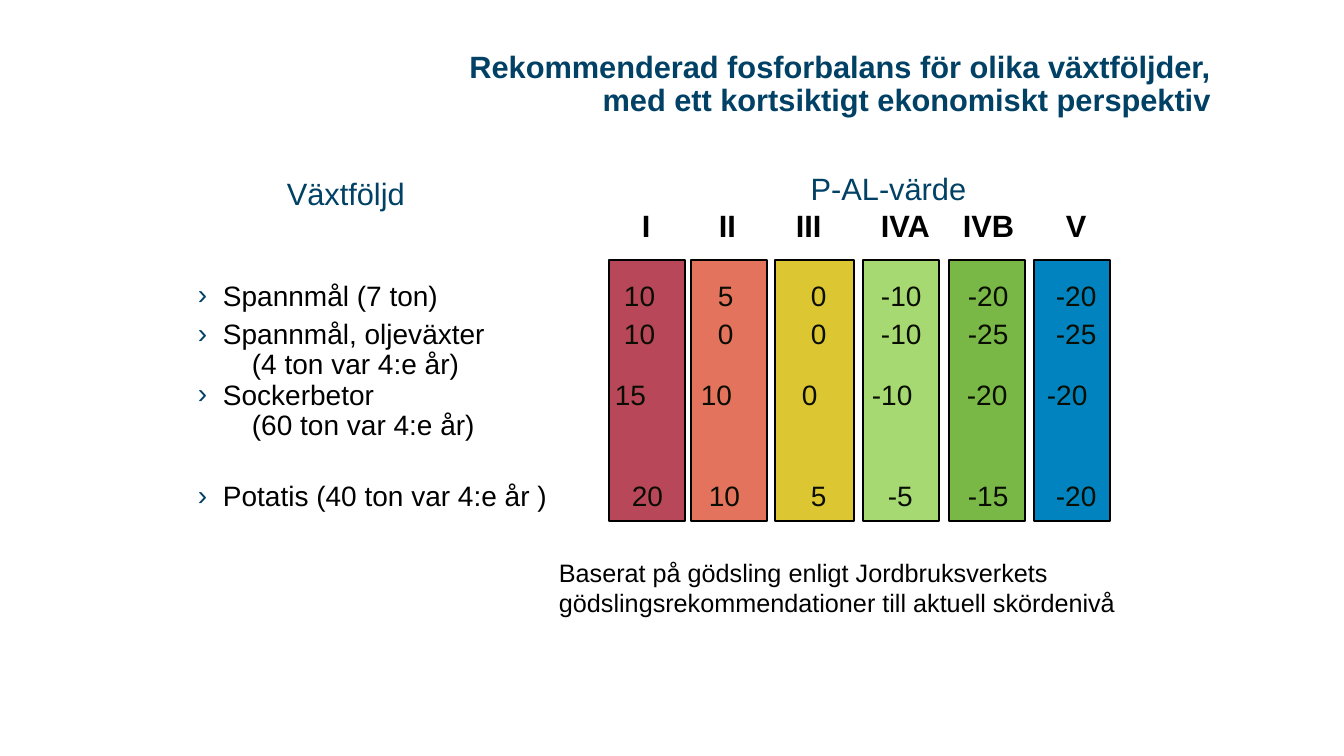
from dataclasses import dataclass
from typing import Any

from lxml.etree import SubElement
from pptx import Presentation
from pptx.dml.color import RGBColor
from pptx.enum.shapes import MSO_SHAPE
from pptx.enum.text import MSO_ANCHOR, PP_ALIGN
from pptx.oxml.ns import qn
from pptx.util import Emu, Pt

NAVY = RGBColor(0x00, 0x41, 0x65)
BLACK = RGBColor(0x00, 0x00, 0x00)
INK = RGBColor(0x0A, 0x0D, 0x02)
WHITE = RGBColor(0xFF, 0xFF, 0xFF)
CRIMSON = RGBColor(0xA7, 0x19, 0x30)
ORANGE = RGBColor(0xDC, 0x50, 0x34)
YELLOW = RGBColor(0xD4, 0xBA, 0x00)
LIME = RGBColor(0x92, 0xD0, 0x50)
GREEN = RGBColor(0x58, 0xA6, 0x18)
BLUE = RGBColor(0x00, 0x83, 0xBE)

SCALE = 914400 / 100.8
HANG = 25
LIST_X = 197
HEAD_X = 641


@dataclass
class Bar:
    left: int
    width: int
    color: RGBColor
    alpha: int = 80


@dataclass
class Row:
    label: str
    values: tuple[str, ...] = ()
    stops: tuple[int, ...] = ()
    lines: float = 0.9
    before: int = 0


BARS = [
    Bar(609, 76, CRIMSON),
    Bar(691, 76, ORANGE),
    Bar(775, 79, YELLOW),
    Bar(863, 76, LIME),
    Bar(949, 76, GREEN),
    Bar(1034, 76, BLUE, 100),
]
GRAIN = (623, 717, 810, 880, 967, 1055)
ROWS = [
    Row("Spannmål (7 ton)", ("10", "5", "0", "-10", "-20", "-20"), GRAIN, 1.7),
    Row("Spannmål, oljeväxter", ("10", "0", "0", "-10", "-25", "-25"), GRAIN, before=6),
    Row("(4 ton var 4:e år)"),
    Row("Sockerbetor", ("15", "10", "0", "-10", "-20", "-20"),
        (614, 700, 801, 871, 966, 1046)),
    Row("(60 ton var 4:e år)"),
    Row("Potatis (40 ton var 4:e år )", ("20", "10", "5", "-5", "-15", "-20"),
        (631, 708, 810, 887, 967, 1055), 1.7, 10),
]


def px(size: int) -> Emu:
    return Emu(round(size * SCALE))


def place(shape: Any, box: tuple[int, int, int, int]) -> None:
    for name, size in zip(("left", "top", "width", "height"), box):
        setattr(shape, name, px(size))


def style(item: Any, **form: Any) -> None:
    for name, value in form.items():
        setattr(item, name, value)


def write(para: Any, text: str, size: int, color: RGBColor, bold: bool = False) -> None:
    run = para.add_run()
    run.text = text
    style(run.font, name="Arial", size=Pt(size), bold=bold)
    run.font.color.rgb = color


def indent(para: Any, left: int, hang: int = 0) -> None:
    props = para._p.get_or_add_pPr()
    props.set("marL", str(px(left)))
    props.set("indent", str(-px(hang)))


def bullet(para: Any) -> None:
    props = para._p.get_or_add_pPr()
    tint = SubElement(props, qn("a:buClr"))
    SubElement(tint, qn("a:srgbClr"), val=str(NAVY))
    SubElement(props, qn("a:buFont"), typeface="Arial")
    SubElement(props, qn("a:buChar"), char="›")


def tabs(para: Any, stops: tuple[int, ...], start: int) -> None:
    group = SubElement(para._p.get_or_add_pPr(), qn("a:tabLst"))
    for stop in stops:
        SubElement(group, qn("a:tab"), pos=str(px(stop - start)), algn="l")


def panel(slide: Any, box: tuple[int, int, int, int], fill: RGBColor) -> Any:
    shape = slide.shapes.add_shape(MSO_SHAPE.RECTANGLE, *map(px, box))
    shape.shadow.inherit = False
    shape.fill.solid()
    shape.fill.fore_color.rgb = fill
    shape.line.fill.background()
    style(shape.text_frame, word_wrap=True, vertical_anchor=MSO_ANCHOR.TOP)
    shape.text_frame.paragraphs[0].alignment = PP_ALIGN.LEFT
    return shape


def draw_bar(slide: Any, bar: Bar) -> None:
    shape = panel(slide, (bar.left, 260, bar.width, 261), bar.color)
    shape.line.color.rgb = BLACK
    shape.line.width = Pt(1)
    if bar.alpha < 100:
        tint = shape._element.spPr.find(qn("a:solidFill"))[0]
        SubElement(tint, qn("a:alpha"), val=str(bar.alpha * 1000))


def text_box(slide: Any, box: tuple[int, int, int, int]) -> Any:
    frame = slide.shapes.add_textbox(*map(px, box)).text_frame
    frame.word_wrap = True
    return frame


def draw_row(para: Any, row: Row) -> None:
    if row.values:
        indent(para, HANG, HANG)
        bullet(para)
        tabs(para, row.stops, LIST_X)
    else:
        indent(para, 54)
    style(para, line_spacing=row.lines, space_before=Pt(row.before))
    write(para, row.label, 20, BLACK)
    if row.values:
        write(para, "\t" + "\t".join(row.values), 20, INK)


def main() -> None:
    deck = Presentation()
    style(deck, slide_width=px(1344), slide_height=px(756))
    slide = deck.slides.add_slide(deck.slide_layouts[5])

    # Title
    title = slide.shapes.title
    place(title, (289, 47, 932, 76))
    style(title.text_frame, word_wrap=True, vertical_anchor=MSO_ANCHOR.MIDDLE)
    para = title.text_frame.paragraphs[0]
    style(para, alignment=PP_ALIGN.RIGHT, line_spacing=0.9)
    first, second = ("Rekommenderad fosforbalans för olika växtföljder,",
                     "med ett kortsiktigt ekonomiskt perspektiv")
    write(para, first, 22, NAVY, True)
    para.add_line_break()
    write(para, second, 22, NAVY, True)

    # Headings
    para = panel(slide, (251, 151, 452, 59), WHITE).text_frame.paragraphs[0]
    indent(para, 26)
    para.line_spacing = 1.5
    write(para, "Växtföljd", 22, NAVY)

    frame = panel(slide, (632, 165, 504, 85), WHITE).text_frame
    para = frame.paragraphs[0]
    indent(para, 9)
    para.alignment = PP_ALIGN.CENTER
    write(para, "P-AL-värde", 22, NAVY)
    para = frame.add_paragraph()
    tabs(para, (718, 795, 880, 962, 1065), HEAD_X)
    para.alignment = PP_ALIGN.LEFT
    write(para, "I\tII\tIII\tIVA\tIVB\tV", 22, BLACK, True)

    # Colour bars
    for bar in BARS:
        draw_bar(slide, bar)

    # Crops and values
    frame = text_box(slide, (188, 250, 949, 364))
    for at, row in enumerate(ROWS):
        draw_row(frame.add_paragraph() if at else frame.paragraphs[0], row)

    # Source note
    note = text_box(slide, (549, 552, 588, 72))
    write(note.paragraphs[0], "Baserat på gödsling enligt Jordbruksverkets "
          "gödslingsrekommendationer till aktuell skördenivå", 18, BLACK)

    deck.save("out.pptx")


if __name__ == "__main__":
    main()
